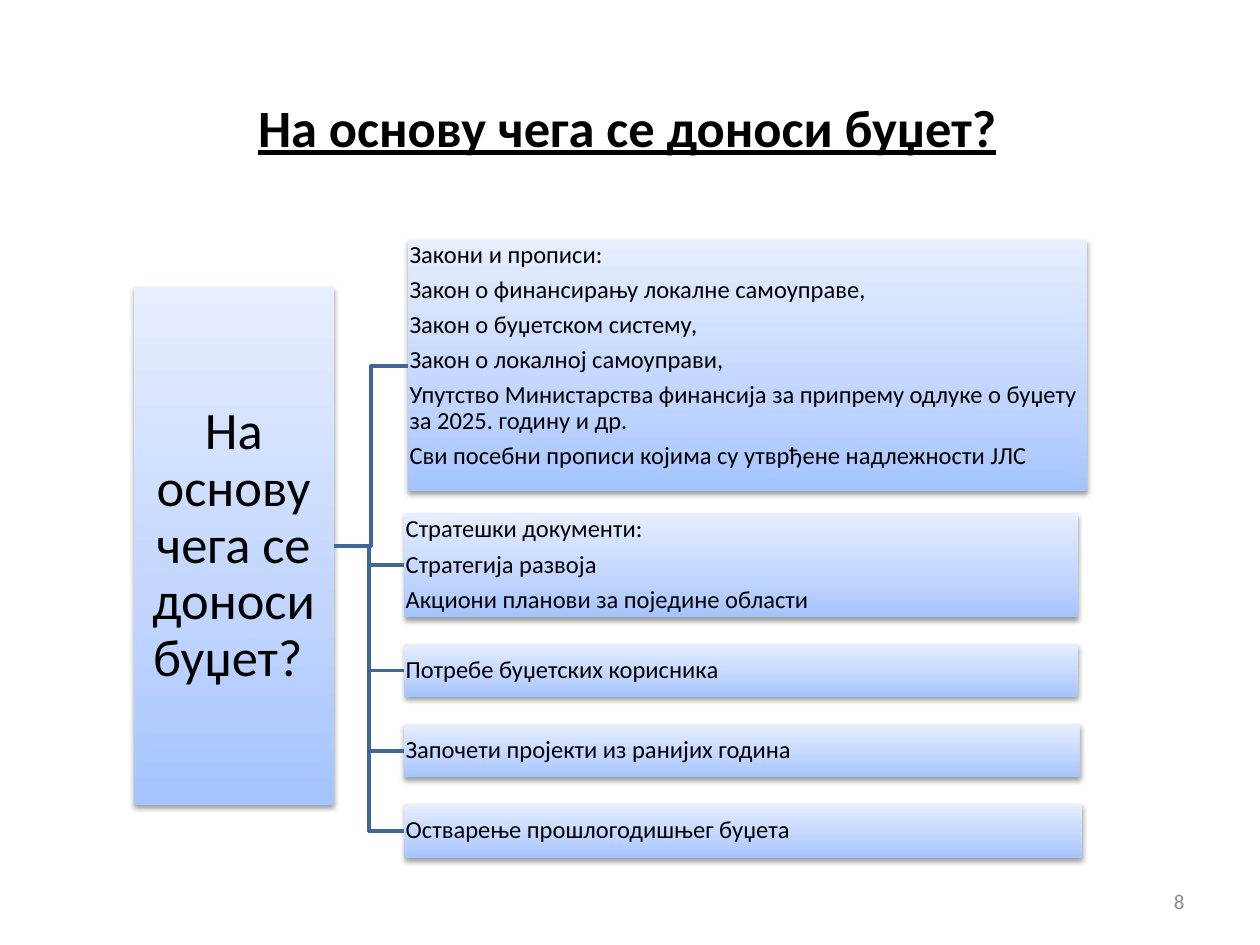
from dataclasses import dataclass

from pptx import Presentation, oxml, util as u
from pptx.dml.color import RGBColor
from pptx.enum import shapes, text
from pptx.oxml import ns

BLACK = RGBColor(0x00, 0x00, 0x00)
GRAY = RGBColor(0x8C, 0x8C, 0x8C)
LINE_BLUE = RGBColor(0x3F, 0x67, 0x97)
GRADIENT = (
    (0, RGBColor(0xA4, 0xC4, 0xFF)),
    (35, RGBColor(0xBF, 0xD4, 0xFF)),
    (100, RGBColor(0xE6, 0xEE, 0xFF)),
)
FONT = "Calibri"
LEFT, CENTER, RIGHT = text.PP_ALIGN.LEFT, text.PP_ALIGN.CENTER, text.PP_ALIGN.RIGHT
TOP, MIDDLE = text.MSO_ANCHOR.TOP, text.MSO_ANCHOR.MIDDLE


@dataclass
class Area:
    left: float
    top: float
    width: float
    height: float

    def lengths(self) -> tuple:
        return tuple(map(u.Inches, (self.left, self.top, self.width, self.height)))


@dataclass
class Node:
    area: Area
    lines: tuple
    size: int = 14
    align: int = LEFT
    anchor: int = MIDDLE
    inset: float = 0.01


ROOT = Node(Area(1.06, 2.28, 1.59, 4.11), ("На основу чега се доноси буџет? ",),
            size=30, align=CENTER, inset=0.02)
BRANCHES = (
    Node(Area(3.24, 1.91, 5.39, 1.99), (
        "Закони и прописи:",
        "Закон о финансирању локалне самоуправе,",
        "Закон о буџетском систему,",
        "Закон о локалној самоуправи,",
        "Упутство Министарства финансија за припрему одлуке о буџету за 2025. годину и др.",
        "Сви посебни прописи којима су утврђене надлежности ЈЛС",
    ), anchor=TOP),
    Node(Area(3.21, 4.07, 5.35, 0.83), (
        "Стратешки документи:",
        "Стратегија развоја",
        "Акциони планови за поједине области",
    )),
    Node(Area(3.21, 5.11, 5.35, 0.42), ("Потребе буџетских корисника",)),
    Node(Area(3.21, 5.75, 5.36, 0.42), ("Започети пројекти из ранијих година",)),
    Node(Area(3.21, 6.38, 5.38, 0.43), ("Остварење прошлогодишњег буџета",)),
)


def add_span(para, words: str, size: int, color: RGBColor):
    span = para.add_run()
    span.text = words
    span.font.name = FONT
    span.font.size = u.Pt(size)
    span.font.color.rgb = color
    return span


def add_label(page, area: Area, words: str, size: int, color: RGBColor, align: int):
    box = page.shapes.add_textbox(*area.lengths())
    frame = box.text_frame
    frame.word_wrap = True
    frame.vertical_anchor = MIDDLE
    para = frame.paragraphs[0]
    para.alignment = align
    return add_span(para, words, size, color)


def style_box(box) -> None:
    """Give a box its three-stop gradient and soft shadow below."""
    box.line.fill.background()
    box.fill.gradient()
    box.fill.gradient_angle = 90
    properties = box._element.spPr
    stops = properties.find(".//" + ns.qn("a:gsLst"))
    for stop in list(stops):
        stops.remove(stop)
    for percent, color in GRADIENT:
        stops.append(oxml.parse_xml(
            f'<a:gs {ns.nsdecls("a")} pos="{percent * 1000}">'
            f'<a:srgbClr val="{color}"/></a:gs>'))
    box.shadow.inherit = False
    properties.find(ns.qn("a:effectLst")).append(oxml.parse_xml(
        f'<a:outerShdw {ns.nsdecls("a")} blurRad="{u.Pt(3.1)}" dist="{u.Pt(1.6)}" '
        'dir="5400000" rotWithShape="0"><a:srgbClr val="000000">'
        '<a:alpha val="38000"/></a:srgbClr></a:outerShdw>'))


def add_node(page, node: Node):
    box = page.shapes.add_shape(shapes.MSO_SHAPE.RECTANGLE, *node.area.lengths())
    style_box(box)
    frame = box.text_frame
    frame.word_wrap = True
    frame.vertical_anchor = node.anchor
    frame.margin_left = frame.margin_right = u.Inches(node.inset)
    frame.margin_top = frame.margin_bottom = u.Inches(node.inset)
    for index, line in enumerate(node.lines):
        para = frame.add_paragraph() if index else frame.paragraphs[0]
        para.alignment = node.align
        para.line_spacing = 0.9
        para.space_after = u.Pt(node.size * 0.35)
        add_span(para, line, node.size, BLACK)
    return box


def join(page, start, end) -> None:
    link = page.shapes.add_connector(shapes.MSO_CONNECTOR.ELBOW, 0, 0, 0, 0)
    link.begin_connect(start, 3)
    link.end_connect(end, 1)
    link.line.color.rgb = LINE_BLUE
    link.line.width = u.Pt(2)
    link._element.spPr.append(oxml.parse_xml(f'<a:effectLst {ns.nsdecls("a")}/>'))


def main() -> None:
    deck = Presentation()
    deck.slide_width, deck.slide_height = u.Inches(10), u.Inches(7.5)
    page = deck.slides.add_slide(deck.slide_layouts[6])

    # Title and page number
    title = add_label(page, Area(0.48, 0.54, 9, 0.93),
                      "На основу чега се доноси буџет?", 30, BLACK, CENTER)
    title.font.bold = True
    title.font.underline = True
    add_label(page, Area(7.17, 6.95, 2.33, 0.4), "8", 12, GRAY, RIGHT)

    # Question on the left, joined to each of its answers
    root = add_node(page, ROOT)
    for branch in BRANCHES:
        join(page, root, add_node(page, branch))

    deck.save("out.pptx")


if __name__ == "__main__":
    main()
